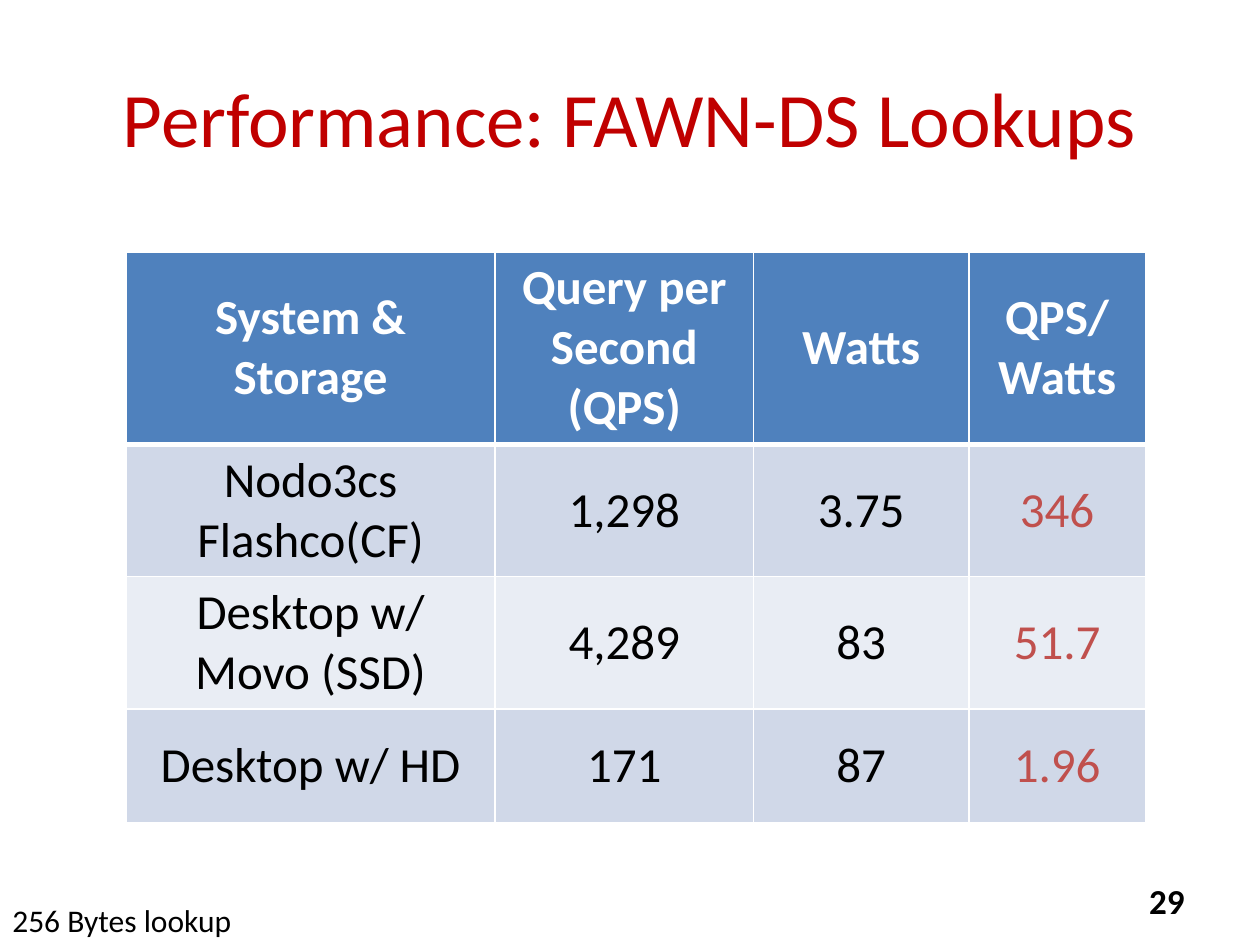
from lxml.etree import SubElement
from pptx import Presentation
from pptx.dml.color import RGBColor
from pptx.enum.text import MSO_ANCHOR, PP_ALIGN
from pptx.oxml.ns import qn
from pptx.util import Cm, Pt

TITLE = "Performance: FAWN-DS Lookups"
ROWS = [
    ["System & Storage", "Query per Second (QPS)", "Watts", "QPS/\nWatts"],
    ["Nodo3cs Flashco(CF)", "1,298", "3.75", "346"],
    ["Desktop w/ Movo (SSD)", "4,289", "83", "51.7"],
    ["Desktop w/ HD", "171", "87", "1.96"],
]
NOTE = "256 Bytes lookup"
PAGE = "29"
WIDTHS = [7.44, 5.21, 4.34, 3.56]
HIGH = 2.29
HEX = {
    "title": "C00000", "head": "4F81BD", "odd": "D0D8E8", "even": "E9EDF4",
    "white": "FFFFFF", "black": "000000", "red": "C0504D",
}


def color(name):
    return RGBColor.from_string(HEX[name])


def style(frame, size, tone, align, bold=False):
    for para in frame.paragraphs:
        para.alignment = align
        font = para.font
        font.name, font.size, font.bold = "Calibri", Pt(size), bold
        font.color.rgb = color(tone)


def edge(cell, sides):
    props = cell._tc.get_or_add_tcPr()
    for spot, (side, width) in enumerate(sides.items()):
        line = SubElement(props, qn("a:ln" + side), w=str(Pt(width)))
        fill = SubElement(line, qn("a:solidFill"))
        SubElement(fill, qn("a:srgbClr"), val=HEX["white"])
        props.insert(spot, line)


def label(slide, text, box, size, align, anchor, bold=False):
    frame = slide.shapes.add_textbox(*map(Cm, box)).text_frame
    frame.word_wrap = True
    frame.vertical_anchor = anchor
    frame.text = text
    style(frame, size, "black", align, bold)


def grid(slide):
    frame = slide.shapes.add_table(
        len(ROWS), len(WIDTHS), Cm(2.54), Cm(5.08),
        Cm(sum(WIDTHS)), Cm(HIGH * len(ROWS)))
    table = frame.table
    for col, width in zip(table.columns, WIDTHS):
        col.width = Cm(width)
    for r, row in enumerate(ROWS):
        table.rows[r].height = Cm(HIGH)
        head = r == 0
        back = "head" if head else "odd" if r % 2 else "even"
        for c, text in enumerate(row):
            cell = table.cell(r, c)
            cell.text = text
            cell.vertical_anchor = MSO_ANCHOR.MIDDLE
            cell.fill.solid()
            cell.fill.fore_color.rgb = color(back)
            last = c == len(row) - 1
            tone = "white" if head else "red" if last else "black"
            style(cell.text_frame, 28, tone, PP_ALIGN.CENTER, head)
            edge(cell, {"L": 1, "R": 1, "T": 3 if r == 1 else 1,
                        "B": 3 if head else 1})


def main():
    deck = Presentation()
    deck.slide_width, deck.slide_height = Cm(25.4), Cm(19.05)
    slide = deck.slides.add_slide(deck.slide_layouts[5])
    title = slide.shapes.title
    title.left, title.top = Cm(1.27), Cm(0.76)
    title.width, title.height = Cm(22.86), Cm(3.18)
    title.text = TITLE
    title.text_frame.vertical_anchor = MSO_ANCHOR.MIDDLE
    style(title.text_frame, 44, "title", PP_ALIGN.CENTER)
    grid(slide)
    label(slide, NOTE, (0, 18.03, 8.69, 1.02), 18,
          PP_ALIGN.LEFT, MSO_ANCHOR.TOP)
    label(slide, PAGE, (18.21, 17.65, 5.92, 1.02), 20,
          PP_ALIGN.RIGHT, MSO_ANCHOR.MIDDLE, True)
    deck.save("out.pptx")


if __name__ == "__main__":
    main()
